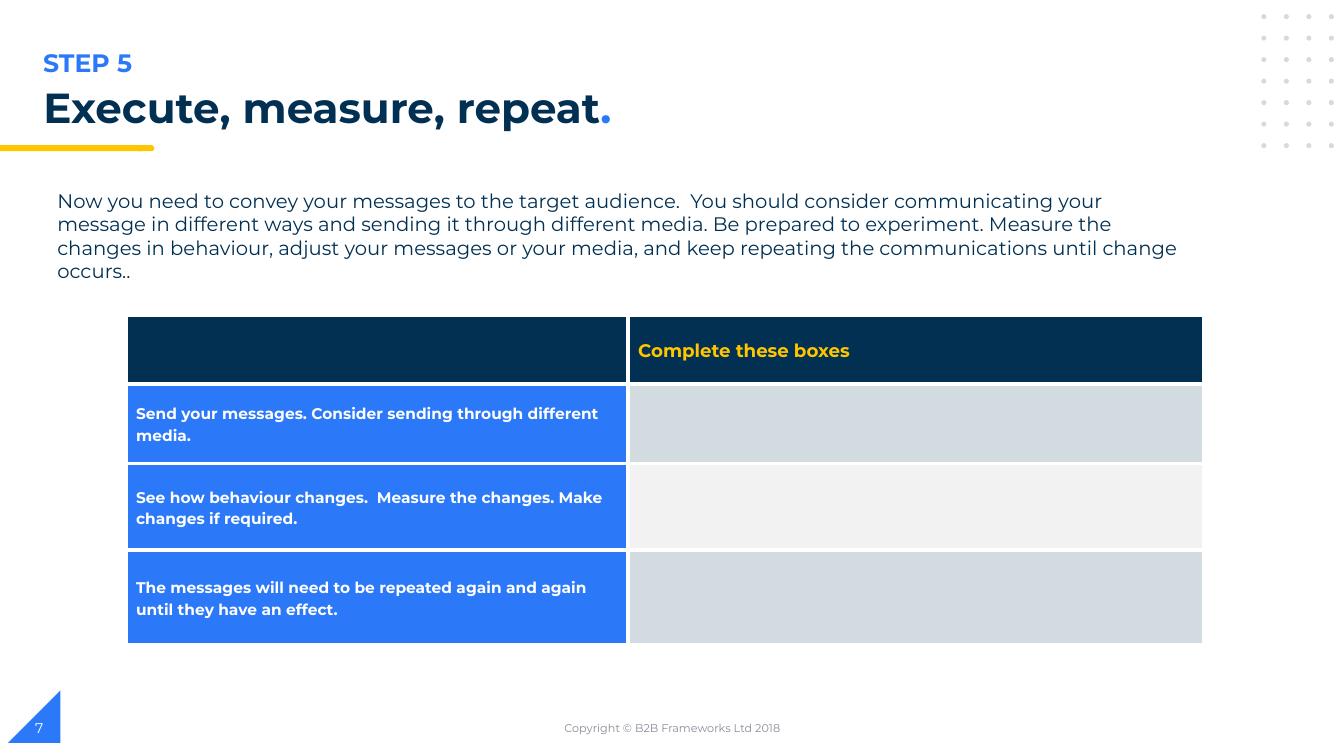
from dataclasses import dataclass
from itertools import product
from typing import Optional

from lxml.etree import SubElement
from pptx import Presentation
from pptx.dml.color import RGBColor
from pptx.enum.shapes import MSO_SHAPE as Shape
from pptx.enum.text import MSO_ANCHOR as Anchor, MSO_AUTO_SIZE as Fit, PP_ALIGN as Align
from pptx.oxml.ns import qn
from pptx.util import Inches, Pt

FONT = "Montserrat"
BLUE = RGBColor(0x2B, 0x79, 0xF8)
NAVY = RGBColor(0x02, 0x30, 0x53)
GOLD = RGBColor(0xFF, 0xC6, 0x00)
MIST = RGBColor(0xD1, 0xDB, 0xE0)
PALE = RGBColor(0xF2, 0xF2, 0xF2)
GREY = RGBColor(0x88, 0x8C, 0x97)
WHITE = RGBColor(0xFF, 0xFF, 0xFF)


@dataclass
class Box:
    left: float
    top: float
    width: float
    height: float

    def spans(self) -> list:
        return [Inches(n) for n in (self.left, self.top, self.width, self.height)]


@dataclass
class Label:
    text: str
    box: Box
    size: float
    color: RGBColor
    bold: bool = False
    align: Align = Align.LEFT
    anchor: Anchor = Anchor.TOP


@dataclass
class Row:
    height: float
    fills: tuple
    left: str = ""
    right: str = ""
    size: float = 11
    color: RGBColor = WHITE


LABELS = [
    Label("STEP 5", Box(0.33, 0.42, 6.69, 0.4), 18, BLUE, True),
    Label("Now you need to convey your messages to the target audience.  You should "
          "consider communicating your message in different ways and sending it through "
          "different media. Be prepared to experiment. Measure the changes in behaviour, "
          "adjust your messages or your media, and keep repeating the communications "
          "until change occurs..", Box(0.47, 1.82, 11.48, 0.81), 14, NAVY),
    Label("Copyright © B2B Frameworks Ltd 2018", Box(4.42, 7.02, 4.5, 0.4), 8, GREY,
          align=Align.CENTER, anchor=Anchor.MIDDLE),
    Label("7", Box(0.25, 7.02, 3, 0.4), 10, WHITE, anchor=Anchor.MIDDLE),
]
ROWS = [
    Row(0.68, (NAVY, NAVY), right="Complete these boxes", size=13, color=GOLD),
    Row(0.79, (BLUE, MIST),
        "Send your messages. Consider sending through different media."),
    Row(0.86, (BLUE, PALE),
        "See how behaviour changes.  Measure the changes. Make changes if required."),
    Row(0.94, (BLUE, MIST),
        "The messages will need to be repeated again and again until they have an effect."),
]
COLS = (4.98, 5.71)


def style(font, size: float, color: RGBColor, bold: Optional[bool] = None) -> None:
    font.name, font.size, font.bold = FONT, Pt(size), bold
    font.color.rgb = color


def add_mark(slide, kind: Shape, box: Box, color: RGBColor):
    mark = slide.shapes.add_shape(kind, *box.spans())
    mark.shadow.inherit = False
    mark.fill.solid()
    mark.fill.fore_color.rgb = color
    mark.line.fill.background()
    return mark


def add_label(slide, label: Label) -> None:
    frame = slide.shapes.add_textbox(*label.box.spans()).text_frame
    frame.word_wrap = True
    frame.vertical_anchor = label.anchor
    para = frame.paragraphs[0]
    para.text, para.alignment = label.text, label.align
    style(para.font, label.size, label.color, label.bold)


def add_title(slide, box: Box) -> None:
    title = slide.shapes.title
    title.left, title.top, title.width, title.height = box.spans()
    frame = title.text_frame
    frame.auto_size, frame.vertical_anchor = Fit.NONE, Anchor.TOP
    para = frame.paragraphs[0]
    para.alignment, para.line_spacing = Align.LEFT, 0.9
    for text, color in (("Execute, measure, repeat", NAVY), (".", BLUE)):
        run = para.add_run()
        run.text = text
        style(run.font, 30, color, True)


def add_edges(cell) -> None:
    props = cell._tc.get_or_add_tcPr()
    for spot, side in enumerate(("lnL", "lnR", "lnT", "lnB")):
        line = SubElement(props, qn(f"a:{side}"), w=str(Pt(3)))
        fill = SubElement(line, qn("a:solidFill"))
        SubElement(fill, qn("a:srgbClr"), val=str(WHITE))
        props.insert(spot, line)


def fill_cell(cell, text: str, row: Row, color: RGBColor) -> None:
    cell.fill.solid()
    cell.fill.fore_color.rgb = color
    add_edges(cell)
    cell.vertical_anchor = Anchor.MIDDLE
    cell.margin_top = cell.margin_bottom = 0
    para = cell.text_frame.paragraphs[0]
    para.text, para.line_spacing = text, 1.15
    style(para.font, row.size, row.color, True)


def add_grid(slide, left: float, top: float) -> None:
    box = Box(left, top, sum(COLS), sum(row.height for row in ROWS))
    table = slide.shapes.add_table(len(ROWS), len(COLS), *box.spans()).table
    for col, width in zip(table.columns, COLS):
        col.width = Inches(width)
    for line, row in zip(table.rows, ROWS):
        line.height = Inches(row.height)
        for cell, text, color in zip(line.cells, (row.left, row.right), row.fills):
            fill_cell(cell, text, row, color)


def main() -> None:
    deck = Presentation()
    deck.slide_width, deck.slide_height = Inches(13.33), Inches(7.5)
    slide = deck.slides.add_slide(deck.slide_layouts[5])

    # Corner triangle and title rule
    corner = add_mark(slide, Shape.RIGHT_TRIANGLE, Box(0.08, 6.85, 0.52, 0.52), BLUE)
    corner._element.spPr.xfrm.set("flipH", "1")
    add_mark(slide, Shape.FLOWCHART_TERMINATOR, Box(1.34, 1.44, 0.19, 0.06), GOLD)
    add_mark(slide, Shape.RECTANGLE, Box(0, 1.44, 1.41, 0.06), GOLD)

    # Dot pattern
    for row, col in product(range(7), range(4)):
        dot = Box(12.51 + col * 0.67 / 3, 0.14 + row * 1.28 / 6, 0.05, 0.05)
        add_mark(slide, Shape.OVAL, dot, MIST)

    # Words and table
    add_title(slide, Box(0.33, 0.82, 10.35, 0.56))
    for label in LABELS:
        add_label(slide, label)
    add_grid(slide, 1.25, 3.13)

    deck.save("out.pptx")


if __name__ == "__main__":
    main()
